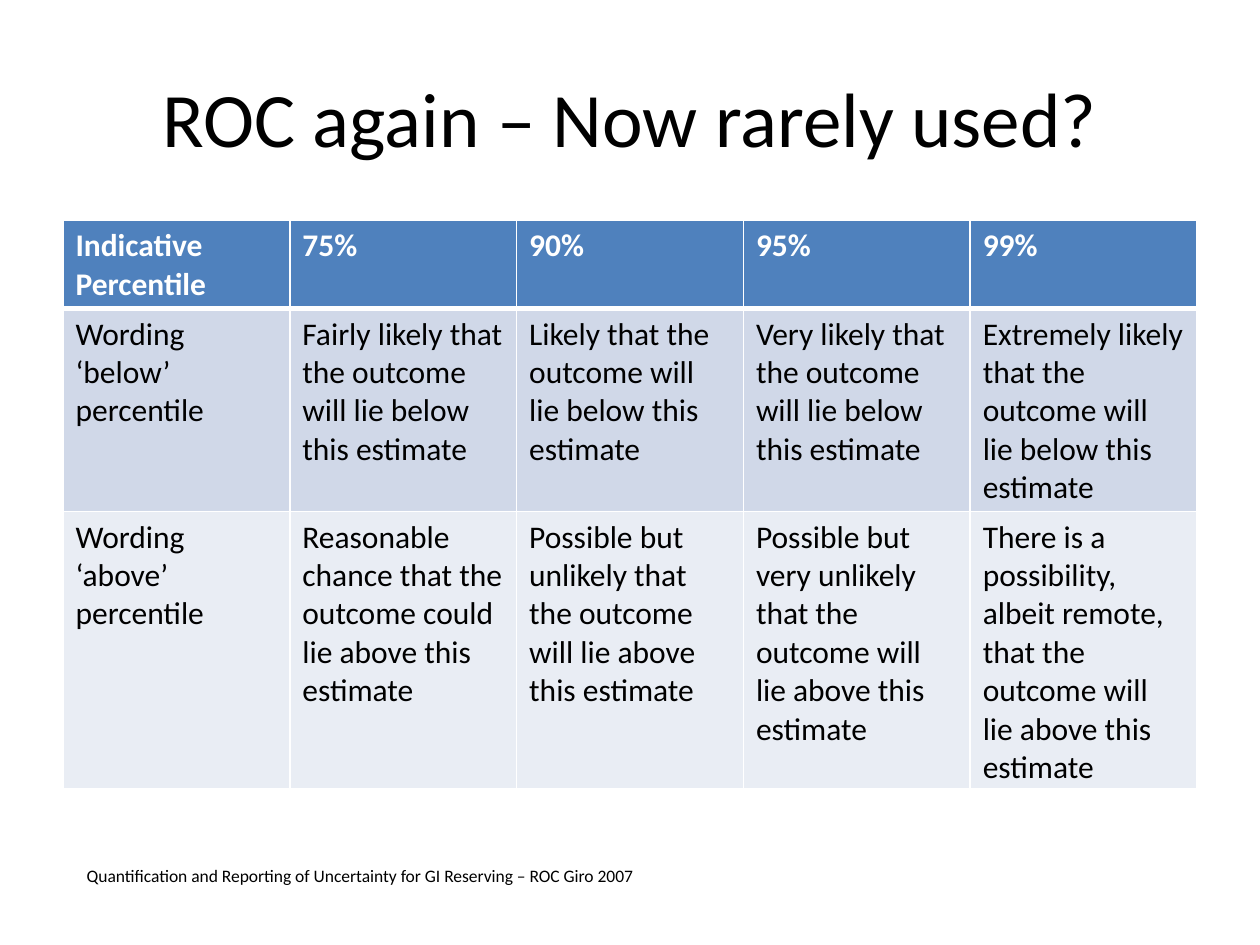
from dataclasses import dataclass

from lxml import etree
from pptx import Presentation
from pptx.dml.color import RGBColor
from pptx.enum.text import MSO_ANCHOR, PP_ALIGN
from pptx.oxml.ns import qn
from pptx.util import Pt

LEFT, CENTER = PP_ALIGN.LEFT, PP_ALIGN.CENTER
TOP, MIDDLE = MSO_ANCHOR.TOP, MSO_ANCHOR.MIDDLE


@dataclass(frozen=True)
class Theme:
    font: str = "Calibri"
    black: str = "000000"
    white: str = "FFFFFF"
    fills: tuple = ("4F81BD", "D0D8E8", "E9EDF4")
    title: int = 44
    body: int = 18
    note: int = 10


theme = Theme()


def write(frame, text, size, color=theme.black, bold=False, align=LEFT, anchor=TOP):
    frame.word_wrap = True
    frame.vertical_anchor = anchor
    para = frame.paragraphs[0]
    para.alignment = align
    run = para.add_run()
    run.text = text
    font = run.font
    font.name, font.size, font.bold = theme.font, Pt(size), bold
    font.color.rgb = RGBColor.from_string(color)


def edge(cell, widths):
    """Draw white cell borders; widths are left, right, top, bottom in points."""
    props = cell._tc.get_or_add_tcPr()
    for i, (side, width) in enumerate(zip("LRTB", widths)):
        line = etree.Element(qn(f"a:ln{side}"), w=str(Pt(width)))
        fill = etree.SubElement(line, qn("a:solidFill"))
        etree.SubElement(fill, qn("a:srgbClr"), val=theme.white)
        props.insert(i, line)


deck = Presentation()
deck.slide_width, deck.slide_height = Pt(720), Pt(540)
slide = deck.slides.add_slide(deck.slide_layouts[6])
shapes = slide.shapes

title = shapes.add_textbox(Pt(36), Pt(21.6), Pt(648), Pt(90))
write(title.text_frame, "ROC again – Now rarely used?", theme.title,
      align=CENTER, anchor=MIDDLE)

rows = [
    ["Indicative Percentile", "75%", "90%", "95%", "99%"],
    ["Wording ‘below’ percentile",
     "Fairly likely that the outcome will lie below this estimate",
     "Likely that the outcome will lie below this estimate",
     "Very likely that the outcome will lie below this estimate",
     "Extremely likely that the outcome will lie below this estimate"],
    ["Wording ‘above’ percentile",
     "Reasonable chance that the outcome could lie above this estimate",
     "Possible but unlikely that the outcome will lie above this estimate",
     "Possible but very unlikely that the outcome will lie above this estimate",
     "There is a possibility, albeit remote, that the outcome will lie above this estimate"],
]
heights = [50, 116, 158]
rules = [1, 3, 1, 1]  # horizontal lines, from top to bottom

table = shapes.add_table(len(rows), len(rows[0]), Pt(36), Pt(126),
                         Pt(648), Pt(sum(heights))).table
for r, texts in enumerate(rows):
    table.rows[r].height = Pt(heights[r])
    head = r == 0
    for c, text in enumerate(texts):
        cell = table.cell(r, c)
        cell.fill.solid()
        cell.fill.fore_color.rgb = RGBColor.from_string(theme.fills[r])
        edge(cell, (1, 1, rules[r], rules[r + 1]))
        write(cell.text_frame, text, theme.body, bold=head,
              color=theme.white if head else theme.black)

note = shapes.add_textbox(Pt(42.5), Pt(491), Pt(465), Pt(19.4))
write(note.text_frame,
      "Quantification and Reporting of Uncertainty for GI Reserving – ROC Giro 2007",
      theme.note)

deck.save("out.pptx")
